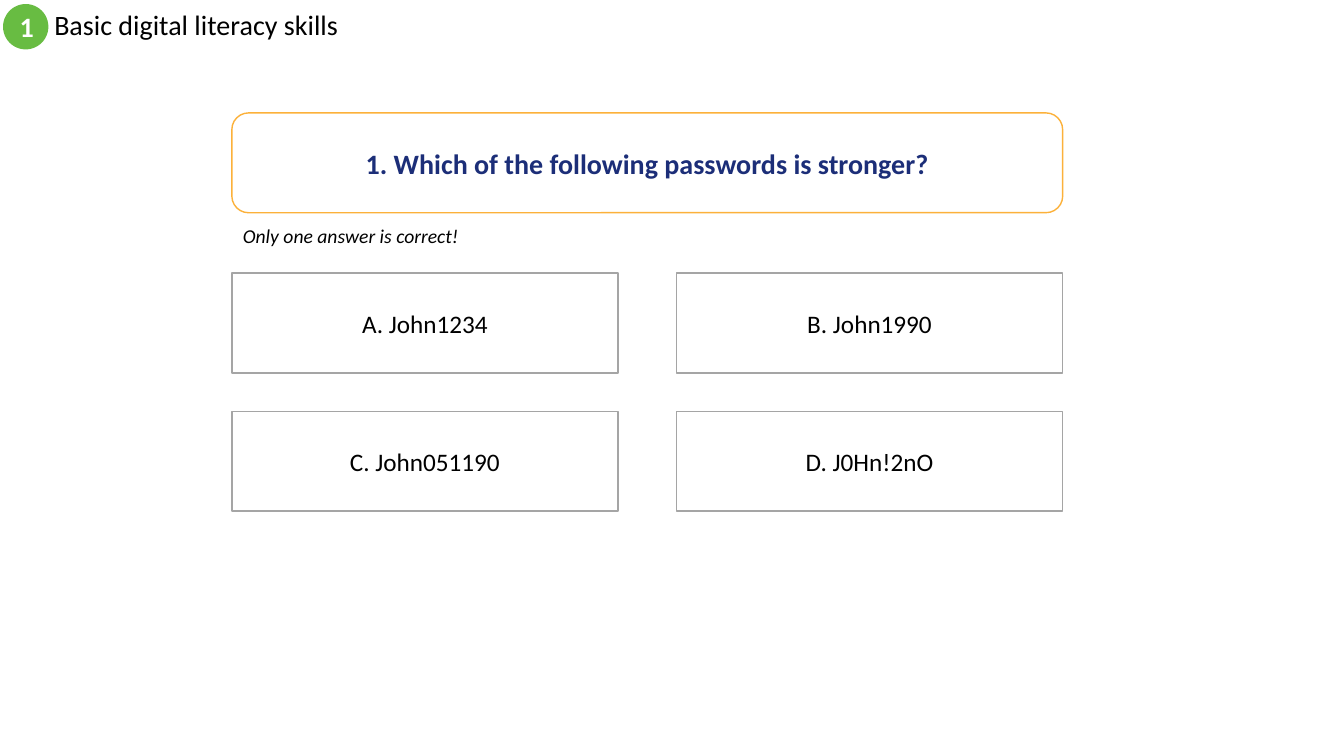
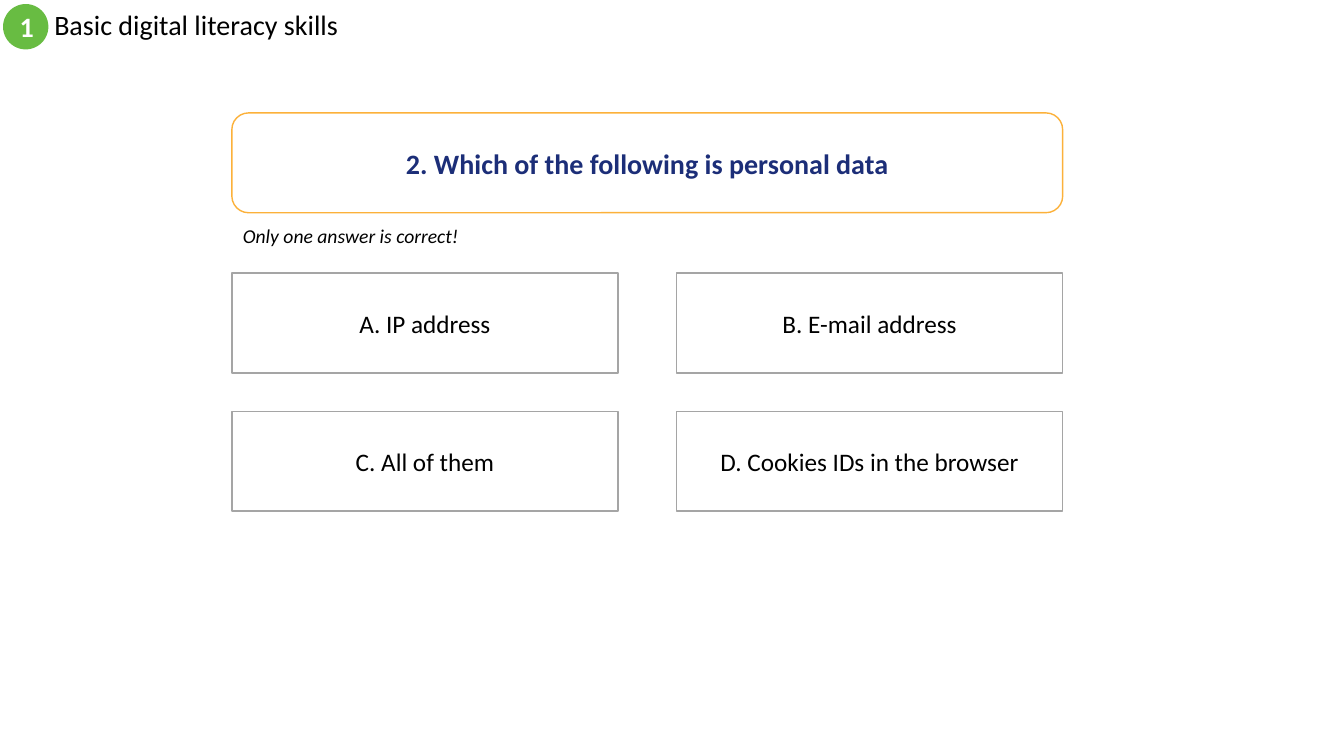
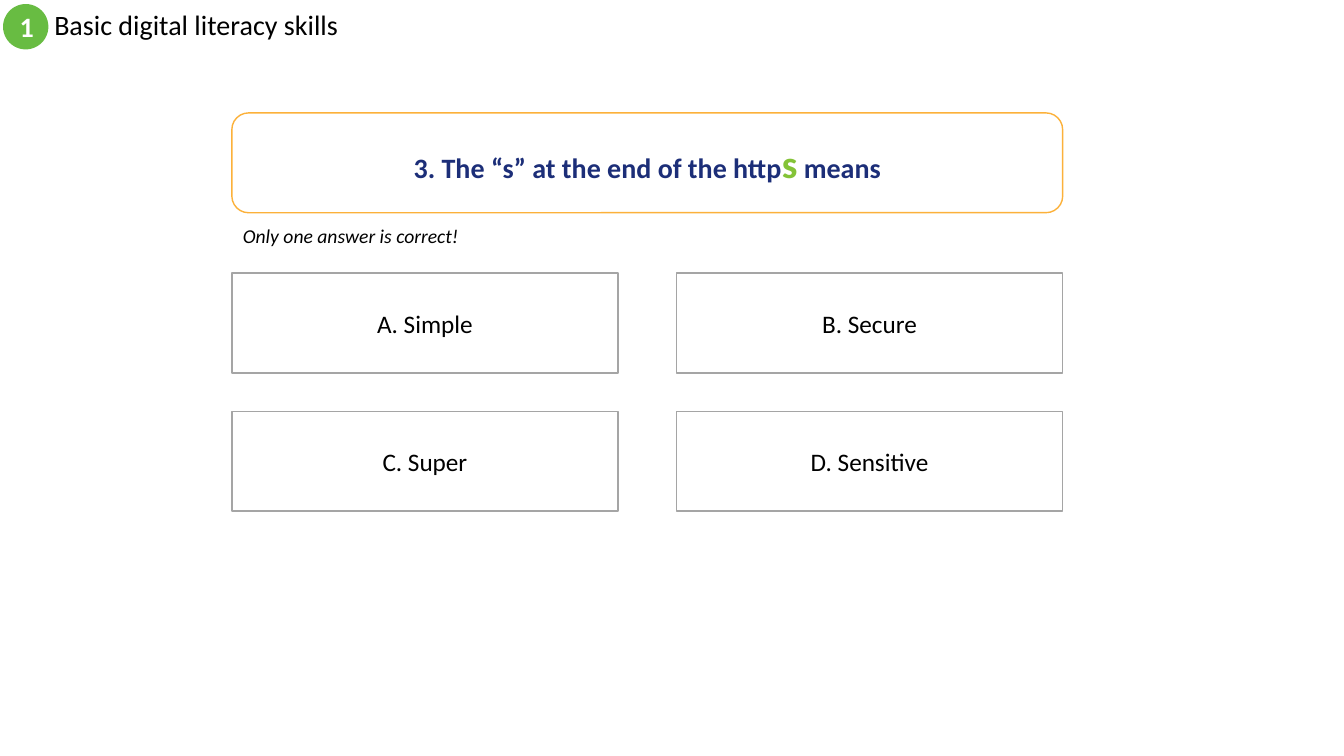
from pptx import Presentation
from pptx import util as u
from pptx.dml.color import RGBColor
from pptx.enum import shapes, text

FONT = "Calibri"
COLORS = {
    "black": "000000",
    "white": "FFFFFF",
    "badge": "68BC42",
    "frame": "FCB13A",
    "question": "1C2E78",
    "accent": "84C337",
    "border": "A5A5A5",
}

# Shared grid, in inches
LEFT, WIDTH, BOX_H = 2.3, 8.24, 0.99
QUESTION_TOP, HINT_TOP, ANSWERS_TOP = 1.12, 2.17, 2.71
ANSWER_W, ROW_STEP = 3.83, 1.37
COL_STEP = WIDTH - ANSWER_W

QUIZ = [
    ("1. Which of the following passwords is stronger?",
     ["John1234", "John1990", "John051190", "J0Hn!2nO"]),
    ("2. Which of the following is personal data",
     ["IP address", "E-mail address", "All of them",
      "Cookies IDs in the browser"]),
    ([("3. The “s” at the end of the http", {}),
      ("s", {"size": 28, "color": "accent"}),
      (" means", {})],
     ["Simple", "Secure", "Super", "Sensitive"]),
]


def rgb(name):
    return RGBColor.from_string(COLORS[name])


def write(tf, content, align="LEFT", anchor="MIDDLE", wrap=True, spacing=None,
          **style):
    """Write a string, or (text, overrides) runs, as one paragraph."""
    tf.word_wrap = wrap
    tf.vertical_anchor = text.MSO_ANCHOR[anchor]
    p = tf.paragraphs[0]
    p.alignment = text.PP_ALIGN[align]
    if spacing:
        p.line_spacing = spacing
    runs = [(content, {})] if isinstance(content, str) else content
    for words, changes in runs:
        look = {"size": 20, "color": "black", "bold": False, "italic": False,
                **style, **changes}
        r = p.add_run()
        r.text = words
        r.font.name = FONT
        r.font.size = u.Pt(look["size"])
        r.font.bold = look["bold"]
        r.font.italic = look["italic"]
        r.font.color.rgb = rgb(look["color"])


class QuizDeck:
    def __init__(self):
        self.prs = Presentation()
        self.prs.slide_width = u.Inches(13.33)
        self.prs.slide_height = u.Inches(7.5)
        self.s = None

    def label(self, content, x, y, w, h, **style):
        sp = self.s.shapes.add_textbox(*map(u.Inches, (x, y, w, h)))
        write(sp.text_frame, content, **style)
        return sp

    def box(self, kind, content, x, y, w, h, fill="white", line=None, **style):
        sp = self.s.shapes.add_shape(shapes.MSO_SHAPE[kind],
                                     *map(u.Inches, (x, y, w, h)))
        sp.shadow.inherit = False
        sp.fill.solid()
        sp.fill.fore_color.rgb = rgb(fill)
        if line:
            sp.line.color.rgb = rgb(line)
            sp.line.width = u.Pt(1)
        else:
            sp.line.fill.background()
        write(sp.text_frame, content, align="CENTER", **style)

    def header(self, number, title):
        self.label(title, 0.44, 0.04, 8, 0.45, spacing=0.9)
        self.box("OVAL", number, 0.03, 0.04, 0.45, 0.45, fill="badge",
                 color="white", bold=True)

    def question(self, content):
        self.box("ROUNDED_RECTANGLE", content, LEFT, QUESTION_TOP, WIDTH,
                 BOX_H, line="frame", color="question", bold=True)

    def answers(self, options):
        for i, option in enumerate(options):
            row, col = divmod(i, 2)
            self.box("RECTANGLE", f"{'ABCD'[i]}. {option}",
                     LEFT + col * COL_STEP, ANSWERS_TOP + row * ROW_STEP,
                     ANSWER_W, BOX_H, line="border", size=18)

    def hint(self, content):
        sp = self.label(content, LEFT + 0.01, HINT_TOP, 2.36, 0.34,
                        anchor="TOP", wrap=False, size=14, italic=True)
        sp.text_frame.auto_size = text.MSO_AUTO_SIZE.SHAPE_TO_FIT_TEXT

    def quiz_slide(self, question, options):
        self.s = self.prs.slides.add_slide(self.prs.slide_layouts[6])
        self.header("1", "Basic digital literacy skills")
        self.question(question)
        self.answers(options)
        self.hint("Only one answer is correct!")


def main():
    deck = QuizDeck()
    for question, options in QUIZ:
        deck.quiz_slide(question, options)
    deck.prs.save("out.pptx")


if __name__ == "__main__":
    main()
